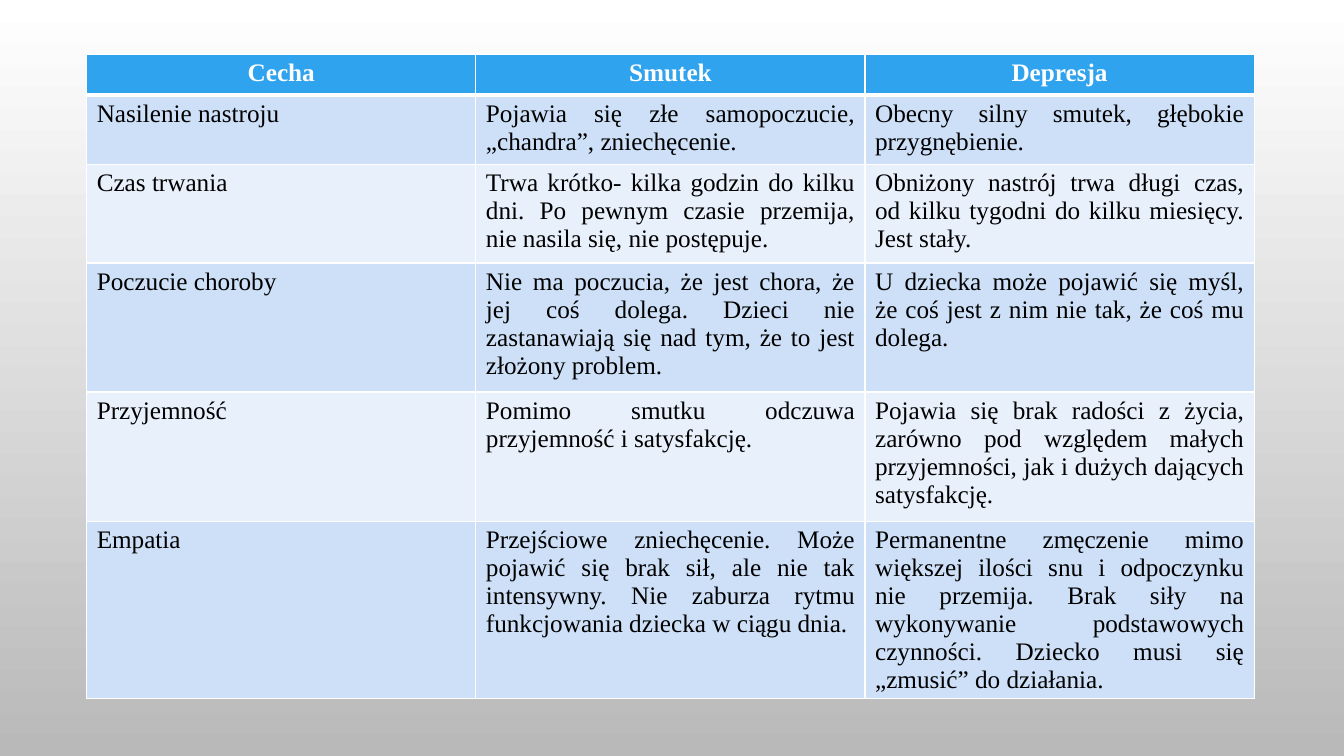
"""Builds a slide with a table comparing sadness and depression in children."""
from lxml import etree
from pptx import Presentation
from pptx.dml.color import RGBColor
from pptx.enum.text import PP_ALIGN
from pptx.oxml.ns import qn
from pptx.util import Inches, Pt

CENTER, JUSTIFY = PP_ALIGN.CENTER, PP_ALIGN.JUSTIFY
FONT = "Times New Roman"
WHITE, BLACK, GREY = "FFFFFF", "000000", "B9B9B9"
HEADER_FILL = "2FA3EE"
BAND_FILLS = ["E8F0FC", "CDE0F8"]

LEFT, TOP = 0.86, 0.54
COLUMN_WIDTH = 3.86
ROW_HEIGHTS = [0.4, 0.69, 0.98, 1.28, 1.28, 1.51]
ROWS = [
    ("Cecha", "Smutek", "Depresja"),
    ("Nasilenie nastroju",
     "Pojawia się złe samopoczucie, „chandra”, zniechęcenie.",
     "Obecny silny smutek, głębokie przygnębienie."),
    ("Czas trwania",
     "Trwa krótko- kilka godzin do kilku dni. Po pewnym czasie przemija, "
     "nie nasila się, nie postępuje.",
     "Obniżony nastrój trwa długi czas, od kilku tygodni do kilku miesięcy. "
     "Jest stały."),
    ("Poczucie choroby",
     "Nie ma poczucia, że jest chora, że jej coś dolega. Dzieci nie "
     "zastanawiają się nad tym, że to jest złożony problem.",
     "U dziecka może pojawić się myśl, że coś jest z nim nie tak, "
     "że coś mu dolega."),
    ("Przyjemność",
     "Pomimo smutku odczuwa przyjemność i satysfakcję.",
     "Pojawia się brak radości z życia, zarówno pod względem małych "
     "przyjemności, jak i dużych dających satysfakcję."),
    ("Empatia",
     "Przejściowe zniechęcenie. Może pojawić się brak sił, ale nie tak "
     "intensywny. Nie zaburza rytmu funkcjowania dziecka w ciągu dnia.",
     "Permanentne zmęczenie mimo większej ilości snu i odpoczynku nie "
     "przemija. Brak siły na wykonywanie podstawowych czynności. Dziecko "
     "musi się „zmusić” do działania."),
]


def color(value):
    return RGBColor.from_string(value)


def write(cell, text, size=18, ink=BLACK, bold=False, align=JUSTIFY):
    para = cell.text_frame.paragraphs[0]
    para.alignment = align
    span = para.add_run()
    span.text = text
    span.font.name = FONT
    span.font.size = Pt(size)
    span.font.bold = bold
    span.font.color.rgb = color(ink)


def set_borders(cell, widths):
    properties = cell._tc.get_or_add_tcPr()
    for side, width in widths.items():
        line = etree.SubElement(properties, qn(f"a:ln{side}"), w=str(Pt(width)))
        fill = etree.SubElement(line, qn("a:solidFill"))
        etree.SubElement(fill, qn("a:srgbClr"), val=WHITE)


def set_background(page):
    fill = page.background.fill
    fill.gradient()
    fill.gradient_angle = 270
    for stop, position, shade in zip(fill.gradient_stops, (0, 1), (WHITE, GREY)):
        stop.position = position
        stop.color.rgb = color(shade)


def add_comparison(page):
    table = page.shapes.add_table(
        len(ROWS), len(ROWS[0]), Inches(LEFT), Inches(TOP),
        Inches(COLUMN_WIDTH * len(ROWS[0])), Inches(sum(ROW_HEIGHTS))).table
    for column in table.columns:
        column.width = Inches(COLUMN_WIDTH)
    for index, (texts, height) in enumerate(zip(ROWS, ROW_HEIGHTS)):
        table.rows[index].height = Inches(height)
        header = index == 0
        for cell, text in zip(table.rows[index].cells, texts):
            if header:
                write(cell, text, ink=WHITE, bold=True, align=CENTER)
                set_borders(cell, {"L": 1, "R": 1, "T": 1, "B": 3})
            else:
                write(cell, text)
                set_borders(cell, {"L": 1, "R": 1, "B": 1})
            cell.fill.solid()
            cell.fill.fore_color.rgb = color(
                HEADER_FILL if header else BAND_FILLS[index % 2])


def main():
    deck = Presentation()
    deck.slide_width, deck.slide_height = Inches(13.33), Inches(7.5)
    page = deck.slides.add_slide(deck.slide_layouts[6])
    set_background(page)
    add_comparison(page)
    deck.save("out.pptx")


if __name__ == "__main__":
    main()
